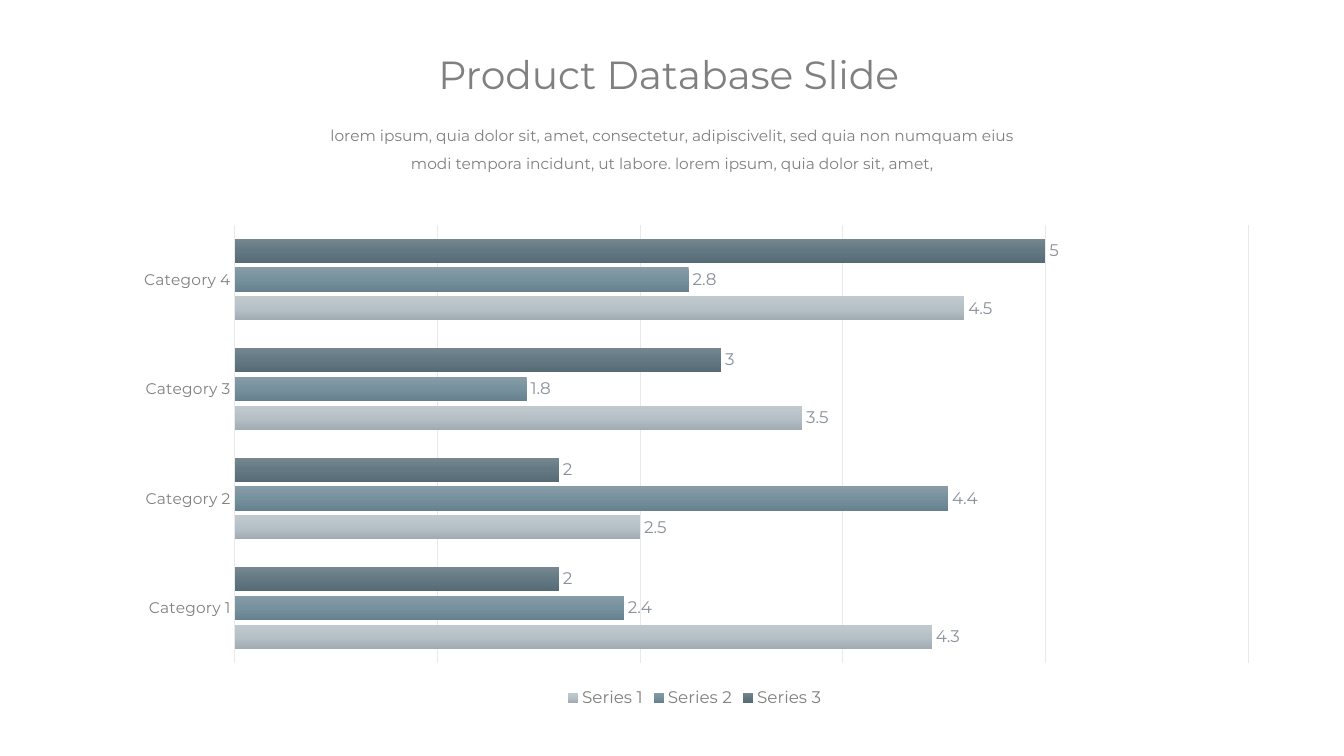
"""Build the product database slide with its clustered bar chart."""
from lxml.etree import SubElement
from pptx import Presentation
from pptx.chart.data import CategoryChartData
from pptx.dml.color import RGBColor
from pptx.enum.chart import (XL_CHART_TYPE, XL_LABEL_POSITION, XL_LEGEND_POSITION,
                             XL_TICK_LABEL_POSITION, XL_TICK_MARK)
from pptx.enum.text import MSO_AUTO_SIZE, PP_ALIGN
from pptx.oxml import parse_xml
from pptx.oxml.ns import nsdecls, qn
from pptx.util import Pt

PX = 9144
THEME = {
    "font": "Montserrat",
    "text": "808080", "chart": "656D78", "value": "89919C", "grid": "E7E9EB",
    "title_size": 28, "body_size": 11, "chart_size": 10, "label_size": 12,
}
CATEGORIES = ["Category 4", "Category 3", "Category 2", "Category 1"]
SERIES = [
    ("Series 3", (5, 3, 2, 2), "0", ("778790", "627883", "566B76")),
    ("Series 2", (2.8, 1.8, 4.4, 2.4), "0.0", ("889CA7", "76919E", "67818E")),
    ("Series 1", (4.5, 3.5, 2.5, 4.3), "0.0", ("C0C9CD", "B6C1C7", "A1ACB2")),
]
TEXTS = [
    ("Product Database Slide", (425, 45, 484, 57), "title_size",
     {"word_wrap": False}, {}),
    ("lorem ipsum, quia dolor sit, amet, consectetur, adipiscivelit, sed quia non "
     "numquam eius modi tempora incidunt, ut labore. lorem ipsum, quia dolor sit, amet,",
     (234, 111, 866, 63), "body_size",
     {"word_wrap": True, "margin_left": 80 * PX, "margin_right": 80 * PX},
     {"alignment": PP_ALIGN.CENTER, "line_spacing": 1.5}),
]


def set_values(target, values):
    for name, value in values.items():
        setattr(target, name, value)


def style_font(font, size, color):
    set_values(font, {"name": THEME["font"], "size": Pt(THEME[size]), "bold": False})
    font.color.rgb = RGBColor.from_string(THEME[color])


deck = Presentation()
set_values(deck, {"slide_width": 1333 * PX, "slide_height": 750 * PX})
page = deck.slides.add_slide(deck.slide_layouts[6])

for text, place, size, frame_format, para_format in TEXTS:
    box = page.shapes.add_textbox(*(length * PX for length in place))
    frame = box.text_frame
    set_values(frame, {"auto_size": MSO_AUTO_SIZE.SHAPE_TO_FIT_TEXT, **frame_format})
    para = frame.paragraphs[0]
    set_values(para, para_format)
    span = para.add_run()
    span.text = text
    style_font(span.font, size, "text")

chart_data = CategoryChartData()
chart_data.categories = CATEGORIES
for name, values, number_format, colors in SERIES:
    chart_data.add_series(name, values, number_format)
chart = page.shapes.add_chart(
    XL_CHART_TYPE.BAR_CLUSTERED,
    *(length * PX for length in (130, 207, 1118, 499)), chart_data).chart
set_values(chart, {"has_title": False, "has_legend": True})
style_font(chart.font, "chart_size", "chart")
set_values(chart.legend, {"position": XL_LEGEND_POSITION.BOTTOM, "include_in_layout": False})
style_font(chart.legend.font, "label_size", "text")

no_ticks = {"major_tick_mark": XL_TICK_MARK.NONE, "minor_tick_mark": XL_TICK_MARK.NONE}
category_axis = chart.category_axis
set_values(category_axis, {**no_ticks, "reverse_order": True})
style_font(category_axis.tick_labels.font, "body_size", "text")
value_axis = chart.value_axis
set_values(value_axis, {
    **no_ticks, "minimum_scale": 0, "maximum_scale": 6.25, "major_unit": 1.25,
    "has_major_gridlines": True, "tick_label_position": XL_TICK_LABEL_POSITION.NONE})
value_axis.format.line.fill.background()
for line, width in ((category_axis.format.line, 1),
                    (value_axis.major_gridlines.format.line, 0.75)):
    line.color.rgb = RGBColor.from_string(THEME["grid"])
    line.width = Pt(width)

plot = chart.plots[0]
set_values(plot, {"gap_width": 115, "overlap": -20, "vary_by_categories": False})
for series, (name, values, number_format, colors) in zip(plot.series, SERIES):
    series.invert_if_negative = False
    stops = "".join(f'<a:gs pos="{index * 50000}"><a:srgbClr val="{color}"/></a:gs>'
                    for index, color in enumerate(colors))
    series.format.fill.background()
    properties = series.format.fill._xPr
    properties.replace(properties.find(qn("a:noFill")), parse_xml(
        f'<a:gradFill {nsdecls("a")} rotWithShape="1"><a:gsLst>{stops}</a:gsLst>'
        '<a:lin ang="5400000" scaled="0"/></a:gradFill>'))
    labels = series.data_labels
    set_values(labels, {
        "show_value": True, "position": XL_LABEL_POSITION.OUTSIDE_END,
        "number_format": number_format, "number_format_is_linked": False})
    style_font(labels.font, "label_size", "value")

plot_area = chart._chartSpace.chart.plotArea
for layout in plot_area.findall(qn("c:layout")):
    plot_area.remove(layout)
layout = parse_xml(f'<c:layout {nsdecls("c")}><c:manualLayout/></c:layout>')
for tag, value in (("layoutTarget", "inner"), ("xMode", "edge"), ("yMode", "edge"),
                   ("x", "0.092"), ("y", "0.032"), ("w", "0.899"), ("h", "0.871")):
    SubElement(layout[0], qn(f"c:{tag}")).set("val", value)
plot_area.insert(0, layout)

deck.save("out.pptx")
